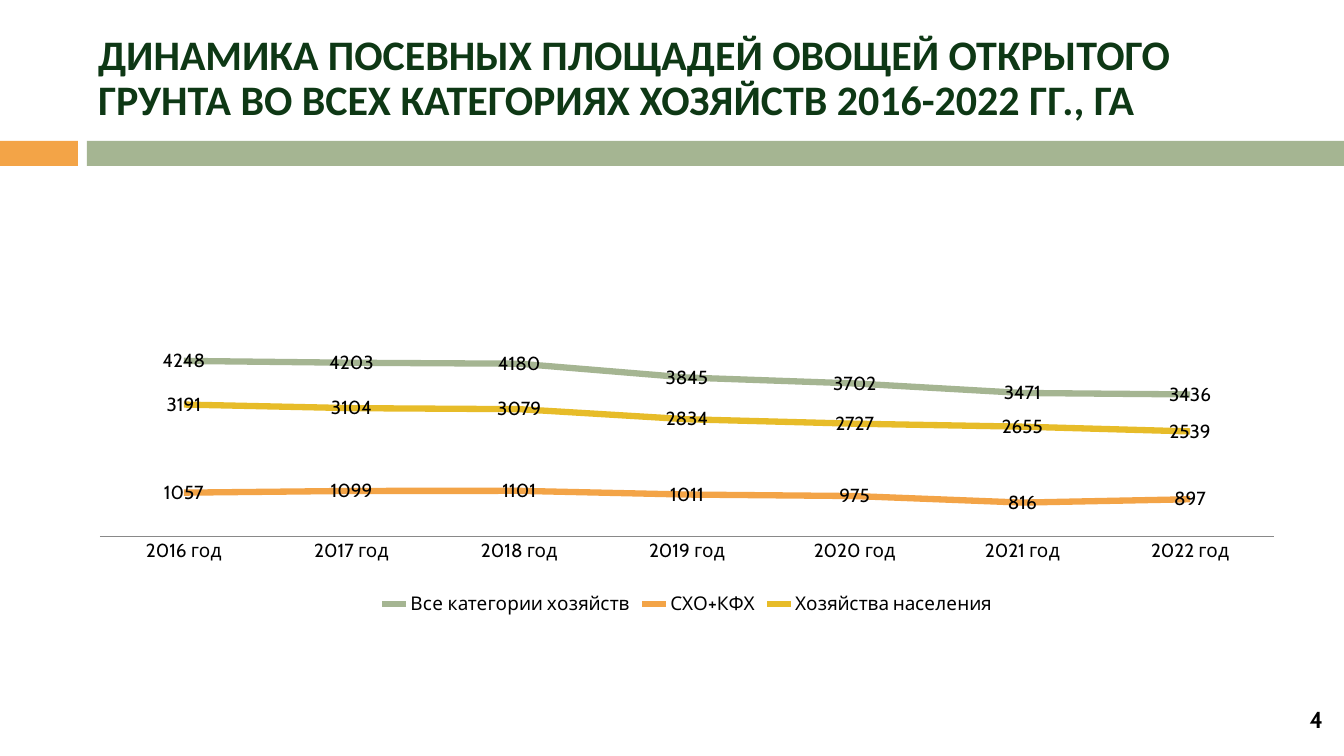
from lxml import etree
from pptx import Presentation
from pptx import util as u
from pptx.chart.data import CategoryChartData
from pptx.dml.color import RGBColor
from pptx.enum import chart as charts, shapes, text
from pptx.oxml.ns import qn

SCALE = 914400 / 75.6
WHITE = RGBColor(0xFF, 0xFF, 0xFF)
BLACK = RGBColor(0, 0, 0)
DARK_GREEN = RGBColor(0x0E, 0x38, 0x15)
SAGE = RGBColor(0xA5, 0xB5, 0x92)
ORANGE = RGBColor(0xF3, 0xA4, 0x47)
GOLD = RGBColor(0xE7, 0xBC, 0x29)
AXIS_GREY = RGBColor(0x89, 0x89, 0x89)

YEARS = [f"{year} год" for year in range(2016, 2023)]
AREAS = [
    ("Все категории хозяйств", SAGE, (4248, 4203, 4180, 3845, 3702, 3471, 3436)),
    ("СХО+КФХ", ORANGE, (1057, 1099, 1101, 1011, 975, 816, 897)),
    ("Хозяйства населения", GOLD, (3191, 3104, 3079, 2834, 2727, 2655, 2539)),
]
PLOT = {"layoutTarget": "inner", "xMode": "edge", "yMode": "edge",
        "x": 0.01, "y": 0.35, "w": 0.98, "h": 0.45}


def px(*lengths):
    return [u.Emu(round(length * SCALE)) for length in lengths]


def apply(target, **values):
    for name, value in values.items():
        setattr(target, name, value)


def style_font(font, size, color, face, bold=False):
    apply(font, size=u.Pt(size), name=face, bold=bold)
    font.color.rgb = color


def write(holder, wording, inset, align, spacing, **font):
    frame = holder.text_frame
    side, top = px(*inset)
    apply(frame, text=wording, word_wrap=True, auto_size=text.MSO_AUTO_SIZE.NONE,
          vertical_anchor=text.MSO_ANCHOR.MIDDLE, margin_left=side,
          margin_right=side, margin_top=top, margin_bottom=top)
    paragraph = frame.paragraphs[0]
    apply(paragraph, alignment=align, line_spacing=spacing)
    style_font(paragraph.runs[0].font, **font)


def add_band(slide, box, color):
    band = slide.shapes.add_shape(shapes.MSO_SHAPE.RECTANGLE, *px(*box))
    band.shadow.inherit = False
    band.fill.solid()
    band.fill.fore_color.rgb = color
    band.line.fill.background()


def set_title(slide, wording, box):
    title = slide.shapes.title
    left, top, width, height = px(*box)
    apply(title, left=left, top=top, width=width, height=height)
    write(title, wording, (8, 4), text.PP_ALIGN.LEFT, 0.9,
          size=40, color=DARK_GREEN, face="Calibri", bold=True)


def place_plot(chart):
    area = chart._chartSpace.chart.plotArea
    for old in area.findall(qn("c:layout")):
        area.remove(old)
    layout = etree.Element(qn("c:layout"))
    manual = etree.SubElement(layout, qn("c:manualLayout"))
    for name, value in PLOT.items():
        etree.SubElement(manual, qn(f"c:{name}")).set("val", str(value))
    area.insert(0, layout)


def add_area_chart(slide, box):
    data = CategoryChartData()
    data.categories = YEARS
    for name, _, values in AREAS:
        data.add_series(name, values)
    chart = slide.shapes.add_chart(charts.XL_CHART_TYPE.LINE, *px(*box), data).chart
    apply(chart, has_title=False, has_legend=True)
    style_font(chart.font, 18, BLACK, "Cabin")
    apply(chart.legend, position=charts.XL_LEGEND_POSITION.BOTTOM,
          include_in_layout=False)
    apply(chart.value_axis, visible=False, has_major_gridlines=False,
          minimum_scale=0, maximum_scale=4500)
    years = chart.category_axis
    apply(years, major_tick_mark=charts.XL_TICK_MARK.NONE, has_major_gridlines=False)
    years.format.line.color.rgb = AXIS_GREY
    years.format.line.width = u.Pt(1)
    chart.plots[0].vary_by_categories = False
    for series, (_, color, _) in zip(chart.plots[0].series, AREAS):
        series.smooth = False
        series.marker.style = charts.XL_MARKER_STYLE.NONE
        series.format.line.color.rgb = color
        series.format.line.width = u.Pt(6)
        apply(series.data_labels, show_value=True,
              position=charts.XL_LABEL_POSITION.CENTER)
    place_plot(chart)


def add_page_number(slide, number, box):
    page = slide.shapes.add_textbox(*px(*box))
    write(page, number, (12, 6), text.PP_ALIGN.RIGHT, 1.0,
          size=22, color=BLACK, face="Cabin", bold=True)


def main():
    deck = Presentation()
    deck.slide_width, deck.slide_height = px(1344, 756)
    slide = deck.slides.add_slide(deck.slide_layouts[5])
    slide.background.fill.solid()
    slide.background.fill.fore_color.rgb = WHITE
    add_band(slide, (0, 141, 78, 25), ORANGE)
    add_band(slide, (87, 141, 1257, 25), SAGE)
    add_area_chart(slide, (88, 206, 1198, 413))
    set_title(slide, "ДИНАМИКА ПОСЕВНЫХ ПЛОЩАДЕЙ ОВОЩЕЙ ОТКРЫТОГО ГРУНТА "
              "ВО ВСЕХ КАТЕГОРИЯХ ХОЗЯЙСТВ 2016-2022 ГГ., ГА", (90, 25, 1198, 109))
    add_page_number(slide, "4", (952, 699, 383, 40))
    deck.save("out.pptx")


main()
